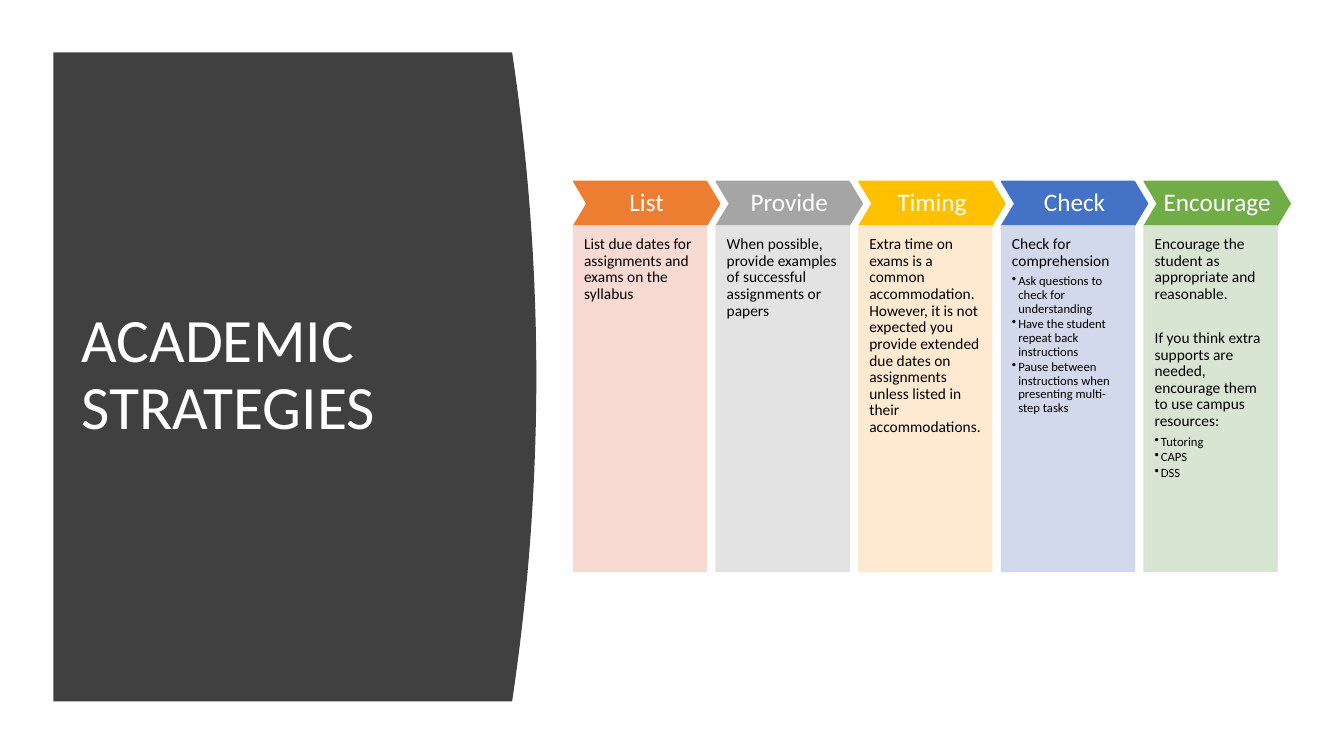
"""Build the Academic Strategies slide with five chevron-headed columns."""
from lxml.etree import SubElement
from pptx import Presentation
from pptx.dml.color import RGBColor
from pptx.enum.shapes import MSO_SHAPE as Shape
from pptx.enum.text import MSO_ANCHOR as Anchor, PP_ALIGN as Align
from pptx.oxml.ns import qn
from pptx.util import Pt

FONT = "Calibri"
WHITE = RGBColor(0xFF, 0xFF, 0xFF)
BLACK = RGBColor(0x00, 0x00, 0x00)
CHARCOAL = RGBColor(0x40, 0x40, 0x40)
ORANGE, PALE_ORANGE = RGBColor(0xED, 0x7D, 0x31), RGBColor(0xF8, 0xD7, 0xCE)
GRAY, PALE_GRAY = RGBColor(0xA5, 0xA5, 0xA5), RGBColor(0xE1, 0xE1, 0xE1)
GOLD, PALE_GOLD = RGBColor(0xFF, 0xC0, 0x00), RGBColor(0xFF, 0xE8, 0xCC)
BLUE, PALE_BLUE = RGBColor(0x44, 0x72, 0xC4), RGBColor(0xCF, 0xD5, 0xEA)
GREEN, PALE_GREEN = RGBColor(0x70, 0xAD, 0x47), RGBColor(0xD5, 0xE3, 0xCF)

COLUMNS = [
    ("List", ORANGE, PALE_ORANGE,
     ["List due dates for assignments and exams on the syllabus"], []),
    ("Provide", GRAY, PALE_GRAY,
     ["When possible, provide examples of successful assignments or papers"], []),
    ("Timing", GOLD, PALE_GOLD,
     ["Extra time on exams is a common accommodation. However, it is not expected "
      "you provide extended due dates on assignments unless listed in their "
      "accommodations."], []),
    ("Check", BLUE, PALE_BLUE, ["Check for comprehension"],
     ["Ask questions to check for understanding",
      "Have the student repeat back instructions",
      "Pause between instructions when presenting multi-step tasks"]),
    ("Encourage", GREEN, PALE_GREEN,
     ["Encourage the student as appropriate and reasonable.",
      "If you think extra supports are needed, encourage them to use campus "
      "resources:"],
     ["Tutoring", "CAPS", "DSS"]),
]
COLUMN_LEFT, COLUMN_PITCH = 409.7, 101.88
HEADER_TOP, HEADER_WIDTH, HEADER_HEIGHT = 129.6, 104.4, 31.7
BODY_WIDTH, BODY_HEIGHT = 95, 247
PANEL_LEFT, PANEL_TOP, PANEL_RIGHT, PANEL_BOTTOM = 38.2, 37.4, 365.8, 501.1
PANEL_BULGE, CURVE_STEPS = 17.3, 40


def format_paragraph(para, size, color, space_after=0):
    para.line_spacing = 0.9
    para.space_after = Pt(space_after)
    for span in para.runs:
        span.font.name = FONT
        span.font.size = Pt(size)
        span.font.color.rgb = color


def add_block(kind, left, top, width, height, color):
    block = slide.shapes.add_shape(kind, Pt(left), Pt(top), Pt(width), Pt(height))
    block.shadow.inherit = False
    block.fill.solid()
    block.fill.fore_color.rgb = color
    block.line.color.rgb = color
    block.line.width = Pt(1)
    return block


deck = Presentation()
deck.slide_width, deck.slide_height = Pt(960), Pt(540)
slide = deck.slides.add_slide(deck.slide_layouts[6])

curve = []
for step in range(CURVE_STEPS + 1):
    share = step / CURVE_STEPS
    x = PANEL_RIGHT + PANEL_BULGE * 4 * share * (1 - share)
    y = PANEL_TOP + (PANEL_BOTTOM - PANEL_TOP) * share
    curve.append((Pt(x), Pt(y)))
outline = slide.shapes.build_freeform(Pt(PANEL_LEFT), Pt(PANEL_TOP))
outline.add_line_segments(curve + [(Pt(PANEL_LEFT), Pt(PANEL_BOTTOM))], close=True)
panel = outline.convert_to_shape()
panel.shadow.inherit = False
panel.fill.solid()
panel.fill.fore_color.rgb = CHARCOAL
panel.line.fill.background()

title = slide.shapes.add_textbox(Pt(51.1), Pt(79.9), Pt(301.7), Pt(377.3))
title.text_frame.word_wrap = True
title.text_frame.vertical_anchor = Anchor.MIDDLE
title.text_frame.text = "ACADEMIC STRATEGIES"
format_paragraph(title.text_frame.paragraphs[0], 44, WHITE)

for index, (heading, color, pale, statements, bullets) in enumerate(COLUMNS):
    left = COLUMN_LEFT + index * COLUMN_PITCH
    header = add_block(Shape.CHEVRON, left, HEADER_TOP, HEADER_WIDTH, HEADER_HEIGHT, color)
    header.adjustments[0] = 0.3
    frame = header.text_frame
    frame.margin_left = frame.margin_right = Pt(3.6)
    frame.margin_top = frame.margin_bottom = Pt(3.6)
    frame.word_wrap = False
    frame.vertical_anchor = Anchor.MIDDLE
    frame.text = heading
    frame.paragraphs[0].alignment = Align.CENTER
    format_paragraph(frame.paragraphs[0], 18, WHITE)

    body = add_block(Shape.RECTANGLE, left, HEADER_TOP + HEADER_HEIGHT,
                     BODY_WIDTH, BODY_HEIGHT, pale)
    for swatch in body._element.spPr.iter(qn("a:srgbClr")):
        SubElement(swatch, qn("a:alpha"), val="90000")
    frame = body.text_frame
    frame.margin_left = frame.margin_right = frame.margin_top = Pt(7.5)
    frame.margin_bottom = Pt(15)
    frame.word_wrap = True
    frame.vertical_anchor = Anchor.TOP
    frame.text = "\n".join(statements + bullets)
    for number, para in enumerate(frame.paragraphs):
        para.alignment = Align.LEFT
        if number < len(statements):
            format_paragraph(para, 11, BLACK, 3.85)
            if number:
                para.space_before = Pt(15.65)
        else:
            format_paragraph(para, 9, BLACK, 1.35)
            para.level = 1
            properties = para._p.get_or_add_pPr()
            properties.set("marL", str(Pt(4.5)))
            properties.set("indent", str(Pt(-4.5)))
            SubElement(properties, qn("a:buChar"), char="•")

deck.save("out.pptx")
